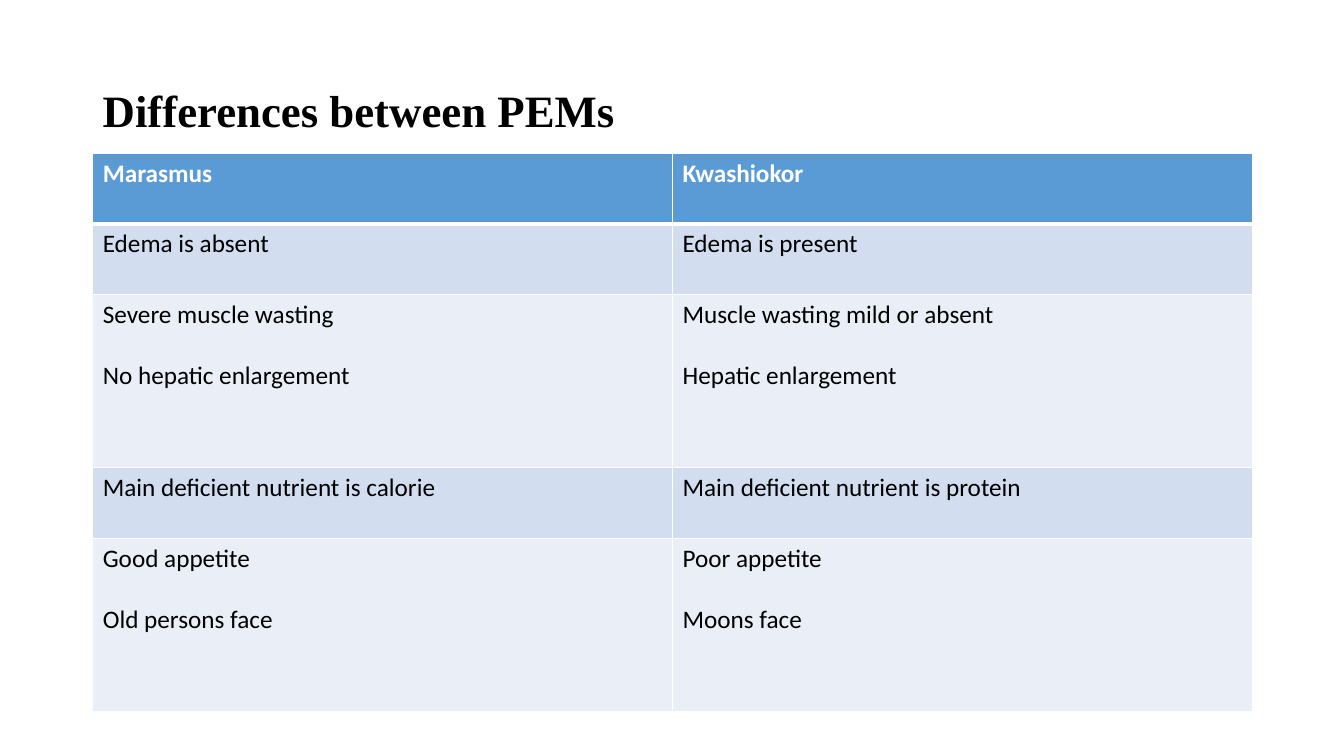
from lxml import etree
from pptx import Presentation
from pptx import util as u
from pptx.dml.color import RGBColor
from pptx.enum import text
from pptx.oxml import ns

PX = 9144  # EMU in one px, 100 px to the inch

BLACK = RGBColor(0x00, 0x00, 0x00)
WHITE = RGBColor(0xFF, 0xFF, 0xFF)
HEADER_BLUE = RGBColor(0x5B, 0x9B, 0xD5)
BANDS = (RGBColor(0xD2, 0xDE, 0xEF), RGBColor(0xEA, 0xEF, 0xF7))

# Each row holds one list of lines per condition
COMPARISON = [
    (["Marasmus"], ["Kwashiokor"]),
    (["Edema is absent"], ["Edema is present"]),
    (["Severe muscle wasting", "No hepatic enlargement"],
     ["Muscle wasting mild or absent", "Hepatic enlargement"]),
    (["Main deficient nutrient is calorie"],
     ["Main deficient nutrient is protein"]),
    (["Good appetite", "Old persons face"], ["Poor appetite", "Moons face"]),
]


class SlideBuilder:
    heading_font, heading_size = "Times New Roman", 32
    body_font, body_size = "Calibri", 18
    line_gap = 22
    row_heights = {1: 70, 2: 172}  # by number of lines

    def __init__(self, slide):
        self.slide = slide

    def add_run(self, paragraph, words, font, size, color, bold):
        run = paragraph.add_run()
        run.text = words
        run.font.name = font
        run.font.size = u.Pt(size)
        run.font.color.rgb = color
        run.font.bold = bold

    def title(self, words, left, top, width, height):
        box = self.slide.shapes.add_textbox(*(n * PX for n in (left, top, width, height)))
        frame = box.text_frame
        frame.word_wrap = True
        frame.vertical_anchor = text.MSO_ANCHOR.MIDDLE
        heading = frame.paragraphs[0]
        heading.line_spacing = 0.9
        self.add_run(heading, words, self.heading_font, self.heading_size, BLACK, True)

    def borders(self, cell, widths):
        properties = cell._tc.get_or_add_tcPr()
        for side, points in widths.items():
            line = etree.SubElement(properties, ns.qn(f"a:ln{side}"), w=str(u.Pt(points)))
            fill = etree.SubElement(line, ns.qn("a:solidFill"))
            etree.SubElement(fill, ns.qn("a:srgbClr"), val=str(WHITE))

    def cell(self, cell, lines, row):
        header = row == 0
        self.borders(cell, {"L": 1, "R": 1, "T": 3 if row == 1 else 1, "B": 3 if header else 1})
        cell.fill.solid()
        cell.fill.fore_color.rgb = HEADER_BLUE if header else BANDS[(row - 1) % 2]
        frame = cell.text_frame
        for index, words in enumerate(lines):
            paragraph = frame.add_paragraph() if index else frame.paragraphs[0]
            if index:
                paragraph.space_before = u.Pt(self.line_gap)
            self.add_run(paragraph, words, self.body_font, self.body_size,
                         WHITE if header else BLACK, header)

    def table(self, rows, left, top, width):
        heights = [self.row_heights[len(row[0])] for row in rows]
        frame = self.slide.shapes.add_table(
            len(rows), len(rows[0]), left * PX, top * PX, width * PX, sum(heights) * PX)
        for row, (entries, height) in enumerate(zip(rows, heights)):
            frame.table.rows[row].height = u.Emu(height * PX)
            for column, lines in enumerate(entries):
                self.cell(frame.table.cell(row, column), lines, row)


def main():
    deck = Presentation()
    deck.slide_width, deck.slide_height = u.Emu(1333 * PX), u.Emu(750 * PX)
    builder = SlideBuilder(deck.slides.add_slide(deck.slide_layouts[6]))

    # Heading
    builder.title("Differences between PEMs", 92, 40, 1150, 145)

    # Comparison of the two conditions
    builder.table(COMPARISON, 92, 152, 1150)

    deck.save("out.pptx")


if __name__ == "__main__":
    main()
